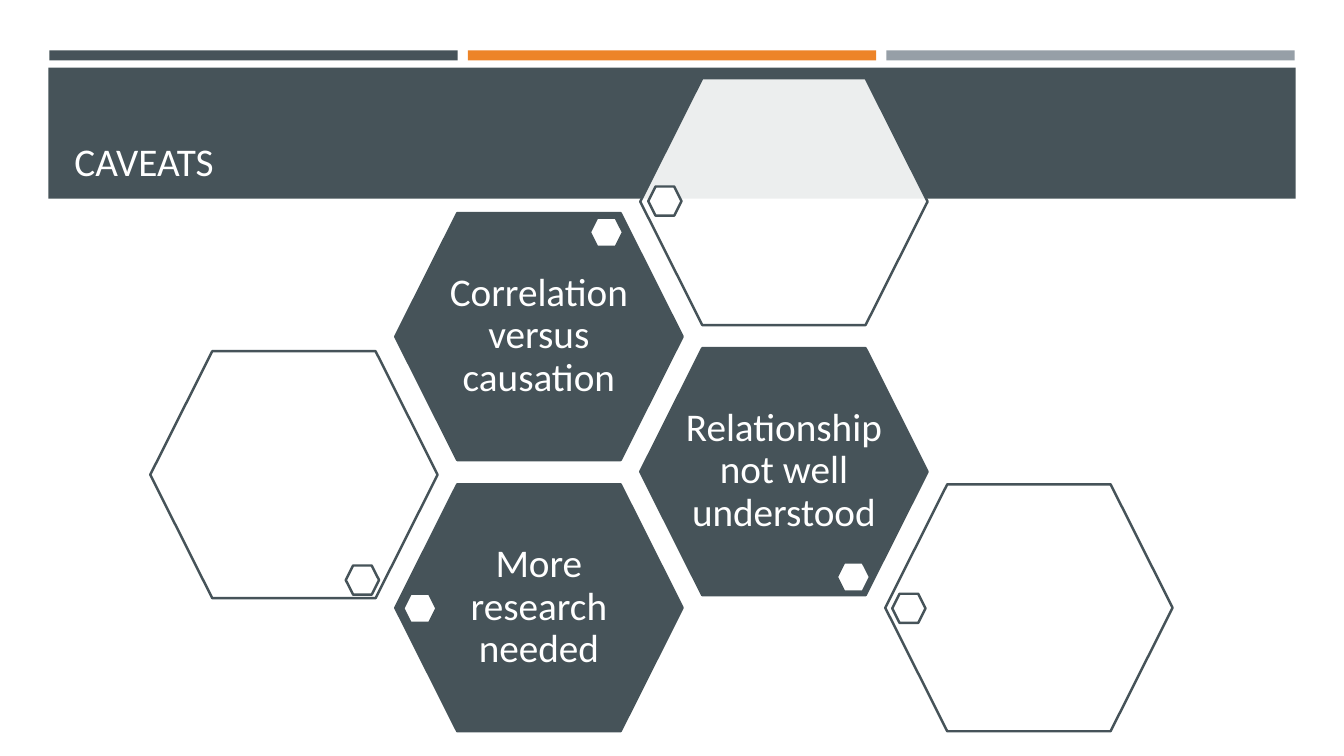
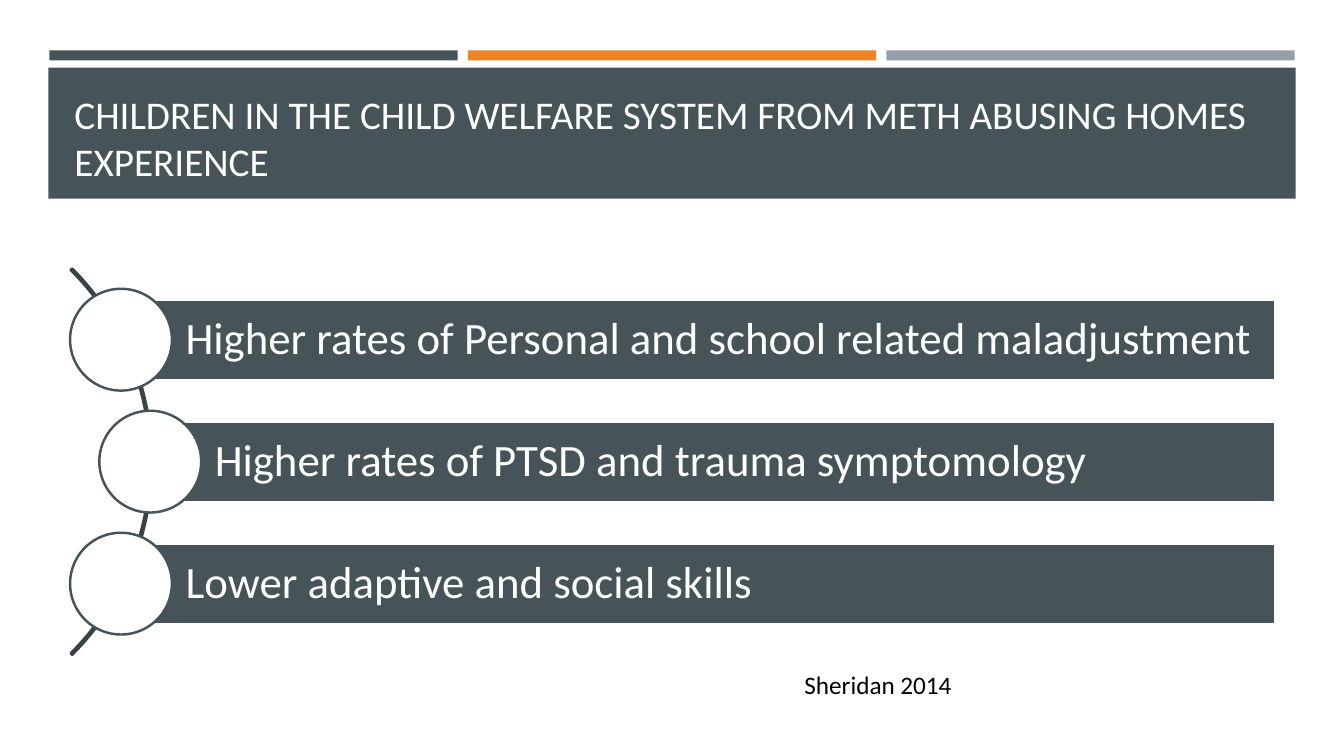
from dataclasses import dataclass

from lxml import etree
from pptx import Presentation
from pptx.dml.color import RGBColor
from pptx.enum.shapes import MSO_SHAPE as Shape
from pptx.enum.text import MSO_ANCHOR as Anchor, PP_ALIGN as Align
from pptx.oxml.ns import qn
from pptx.util import Inches, Pt


@dataclass(frozen=True)
class Theme:
    slate: str = "465359"
    orange: str = "ED8428"
    gray: str = "969FA7"
    arc: str = "384247"
    white: str = "FFFFFF"
    black: str = "000000"
    font: str = "Calibri"
    title: int = 28
    cell: int = 28
    bar: int = 32
    note: int = 18
    line: float = 1.75


T = Theme()
PAD = (0.1, 0.05, 0.1, 0.05)

# Column, top, text, left and top of the small hexagon
CELLS = [
    (1, 4.8, "More research needed", 4, 5.89),
    (0, 3.48, "", 3.43, 5.61),
    (2, 3.45, "Relationship not well understood", 8.3, 5.58),
    (3, 4.8, "", 8.85, 5.89),
    (1, 2.11, "Correlation versus causation", 5.85, 2.16),
    (2, 0.77, "", 6.43, 1.85),
]

# Text and indent of each bar
EFFECTS = [
    ("Higher rates of Personal and school related maladjustment", 0),
    ("Higher rates of PTSD and trauma symptomology", 0.29),
    ("Lower adaptive and social skills", 0),
]


def color(name):
    return RGBColor.from_string(name)


def draw(slide, kind, box, fill, line=None, adjust=(), alpha=None):
    shape = slide.shapes.add_shape(kind, *map(Inches, box))
    shape.shadow.inherit = False
    shape.fill.solid()
    shape.fill.fore_color.rgb = color(fill)
    if alpha:
        node = shape.fill._xPr.find(qn("a:solidFill"))[0]
        etree.SubElement(node, qn("a:alpha")).set("val", str(alpha * 1000))
    if line:
        shape.line.color.rgb = color(line)
        shape.line.width = Pt(T.line)
    else:
        shape.line.fill.background()
    for i, value in enumerate(adjust):
        shape.adjustments[i] = value
    return shape


def write(shape, text, size, ink=T.white, align=Align.LEFT,
          anchor=Anchor.MIDDLE, pad=PAD, gap=1.0):
    frame = shape.text_frame
    frame.text = text
    frame.word_wrap = True
    frame.vertical_anchor = anchor
    (frame.margin_left, frame.margin_top,
     frame.margin_right, frame.margin_bottom) = map(Inches, pad)
    para = frame.paragraphs[0]
    para.alignment = align
    para.line_spacing = gap
    font = para.runs[0].font
    font.name = T.font
    font.size = Pt(size)
    font.color.rgb = color(ink)


def label(slide, box, text, size, **style):
    write(slide.shapes.add_textbox(*map(Inches, box)), text, size, **style)


def start(deck, title):
    """Add a slide with the shared stripes, band and title."""
    slide = deck.slides.add_slide(deck.slide_layouts[6])
    for i, fill in enumerate((T.slate, T.orange, T.gray)):
        draw(slide, Shape.RECTANGLE, (0.49 + 4.15 * i, 0.5, 4.05, 0.1), fill)
    draw(slide, Shape.RECTANGLE, (0.48, 0.67, 12.37, 1.3), T.slate)
    label(slide, (0.64, 0.77, 12.06, 1.11), title, T.title,
          anchor=Anchor.BOTTOM)
    return slide


def hexagon(slide, box, fill, alpha=None):
    draw(slide, Shape.HEXAGON, box, fill, T.slate, (0.25, 1.15), alpha)


def caveats(deck):
    slide = start(deck, "CAVEATS")
    wide, high = 2.85, 2.46
    for col, top, text, dot_x, dot_y in CELLS:
        left = 1.49 + 2.43 * col
        box = (left, top, wide, high)
        if text:
            hexagon(slide, box, T.slate)
            label(slide, (left + 0.44, top + 0.38, 1.97, 1.69), text, T.cell,
                  align=Align.CENTER, pad=(0, 0.04, 0, 0.04), gap=0.9)
        else:
            hexagon(slide, box, T.white, 90)
        hexagon(slide, (dot_x, dot_y, 0.33, 0.29), T.white)


def effects(deck):
    slide = start(deck, "CHILDREN IN THE CHILD WELFARE SYSTEM FROM METH "
                        "ABUSING HOMES EXPERIENCE")
    draw(slide, Shape.BLOCK_ARC, (-3.91, 1.87, 5.42, 5.42), T.arc, T.arc,
         (189, 27, 0.004))
    high, disc, right = 0.8, 1.01, 12.65
    for i, (text, indent) in enumerate(EFFECTS):
        left, top = 1.2 + indent, 2.97 + 1.21 * i
        bar = draw(slide, Shape.RECTANGLE, (left, top, right - left, high),
                   T.slate, T.white)
        write(bar, text, T.bar, pad=(0.64, 0.09, 0.09, 0.09), gap=0.9)
        draw(slide, Shape.OVAL,
             (left - disc / 2, top + (high - disc) / 2, disc, disc),
             T.white, T.slate)
    label(slide, (7.88, 6.59, 2.49, 0.4), "Sheridan 2014", T.note,
          ink=T.black, anchor=Anchor.TOP)


def main():
    deck = Presentation()
    deck.slide_width, deck.slide_height = Inches(13.33), Inches(7.5)
    caveats(deck)
    effects(deck)
    deck.save("out.pptx")


if __name__ == "__main__":
    main()
